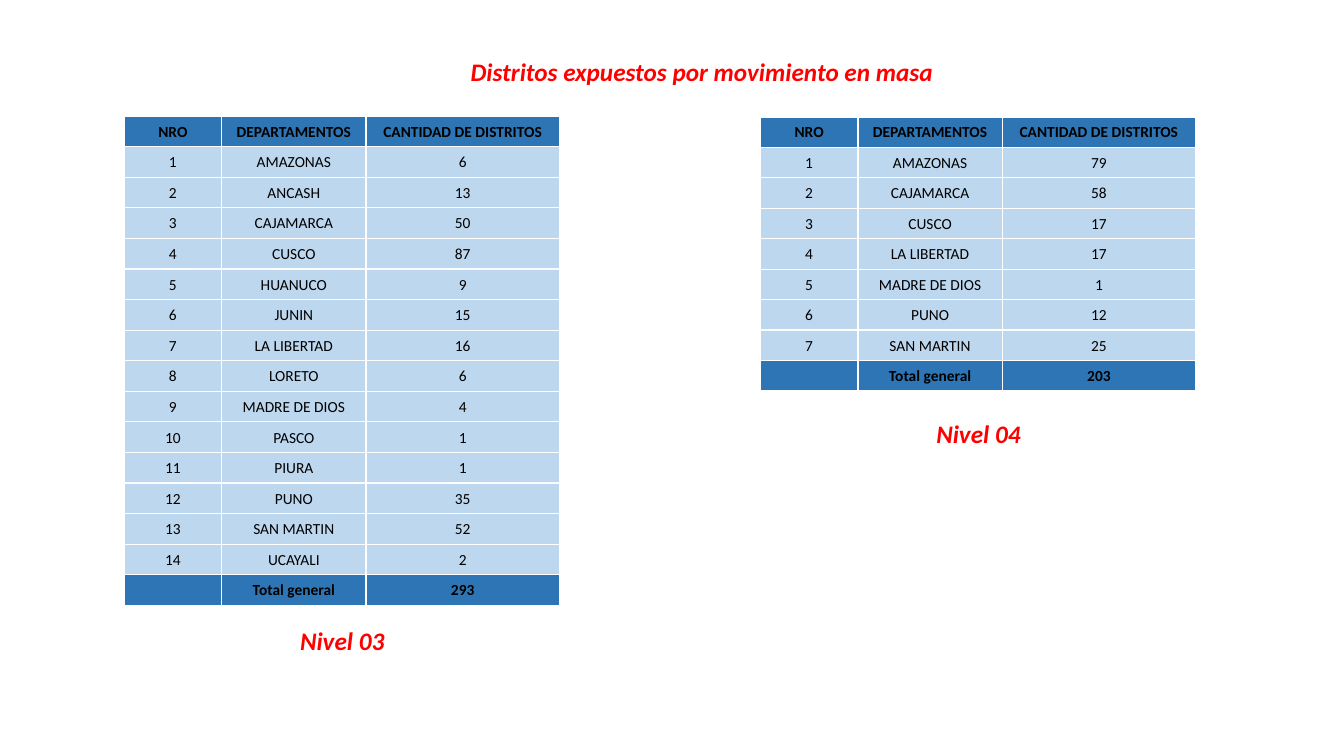
from lxml.etree import SubElement
from pptx import Presentation
from pptx.dml.color import RGBColor
from pptx.enum.text import MSO_ANCHOR, PP_ALIGN
from pptx.oxml.ns import qn
from pptx.util import Inches, Pt

RED = RGBColor(0xFF, 0x00, 0x00)
BLACK = RGBColor(0x00, 0x00, 0x00)
WHITE = RGBColor(0xFF, 0xFF, 0xFF)
DARK_BLUE = RGBColor(0x2E, 0x75, 0xB6)
LIGHT_BLUE = RGBColor(0xBD, 0xD7, 0xEE)

FONT = "Calibri"
COLUMN_WIDTHS = (0.97, 1.43, 1.92)
HEADER = ("NRO", "DEPARTAMENTOS", "CANTIDAD DE DISTRITOS")
LEVEL_3 = (
    ("AMAZONAS", 6), ("ANCASH", 13), ("CAJAMARCA", 50), ("CUSCO", 87),
    ("HUANUCO", 9), ("JUNIN", 15), ("LA LIBERTAD", 16), ("LORETO", 6),
    ("MADRE DE DIOS", 4), ("PASCO", 1), ("PIURA", 1), ("PUNO", 35),
    ("SAN MARTIN", 52), ("UCAYALI", 2),
)
LEVEL_4 = (
    ("AMAZONAS", 79), ("CAJAMARCA", 58), ("CUSCO", 17), ("LA LIBERTAD", 17),
    ("MADRE DE DIOS", 1), ("PUNO", 12), ("SAN MARTIN", 25),
)


def format_paragraph(paragraph, size, color, bold, italic=False):
    paragraph.alignment = PP_ALIGN.CENTER
    font = paragraph.font
    font.name = FONT
    font.size = Pt(size)
    font.bold = bold
    font.italic = italic
    font.color.rgb = color


def write_heading(shape, text, wrap):
    frame = shape.text_frame
    frame.text = text
    frame.word_wrap = wrap
    frame.vertical_anchor = MSO_ANCHOR.TOP
    paragraph = frame.paragraphs[0]
    paragraph.line_spacing = 1.0
    format_paragraph(paragraph, 18, RED, True, True)


def add_title(slide, text):
    title = slide.shapes.title
    title.left, title.top = Inches(4.54), Inches(0.51)
    title.width, title.height = Inches(4.84), Inches(0.4)
    write_heading(title, text, False)


def add_level_label(slide, left, top, text):
    label = slide.shapes.add_textbox(Inches(left), Inches(top), Inches(1.07), Inches(0.4))
    write_heading(label, text, True)


def add_borders(cell):
    properties = cell._tc.get_or_add_tcPr()
    for side in ("a:lnL", "a:lnR", "a:lnT", "a:lnB"):
        line = SubElement(properties, qn(side), w=str(Pt(1)))
        fill = SubElement(line, qn("a:solidFill"))
        SubElement(fill, qn("a:srgbClr"), val=str(WHITE))


def format_cell(cell, text, emphasized):
    cell.text = text
    cell.vertical_anchor = MSO_ANCHOR.MIDDLE
    cell.margin_left = cell.margin_right = cell.margin_top = Inches(0.01)
    cell.margin_bottom = 0
    add_borders(cell)
    cell.fill.solid()
    cell.fill.fore_color.rgb = DARK_BLUE if emphasized else LIGHT_BLUE
    format_paragraph(cell.text_frame.paragraphs[0], 11, BLACK, emphasized)


def add_district_table(slide, left, top, height, districts, total):
    numbered = [(number, *district) for number, district in enumerate(districts, 1)]
    rows = [HEADER, *numbered, ("", "Total general", total)]
    table = slide.shapes.add_table(
        len(rows), len(HEADER), Inches(left), Inches(top),
        Inches(sum(COLUMN_WIDTHS)), Inches(height),
    ).table
    for column, width in zip(table.columns, COLUMN_WIDTHS):
        column.width = Inches(width)
    for row_index, row in enumerate(rows):
        emphasized = row_index in (0, len(rows) - 1)
        for column_index, value in enumerate(row):
            format_cell(table.cell(row_index, column_index), str(value), emphasized)


def main():
    presentation = Presentation()
    presentation.slide_width = Inches(13.33)
    presentation.slide_height = Inches(7.5)
    slide = presentation.slides.add_slide(presentation.slide_layouts[5])
    add_title(slide, "Distritos expuestos por movimiento en masa")
    add_level_label(slide, 2.86, 6.15, "Nivel 03")
    add_level_label(slide, 9.17, 4.1, "Nivel 04")
    add_district_table(slide, 1.23, 1.15, 4.86, LEVEL_3, 293)
    add_district_table(slide, 7.54, 1.16, 2.72, LEVEL_4, 203)
    presentation.save("out.pptx")


if __name__ == "__main__":
    main()
